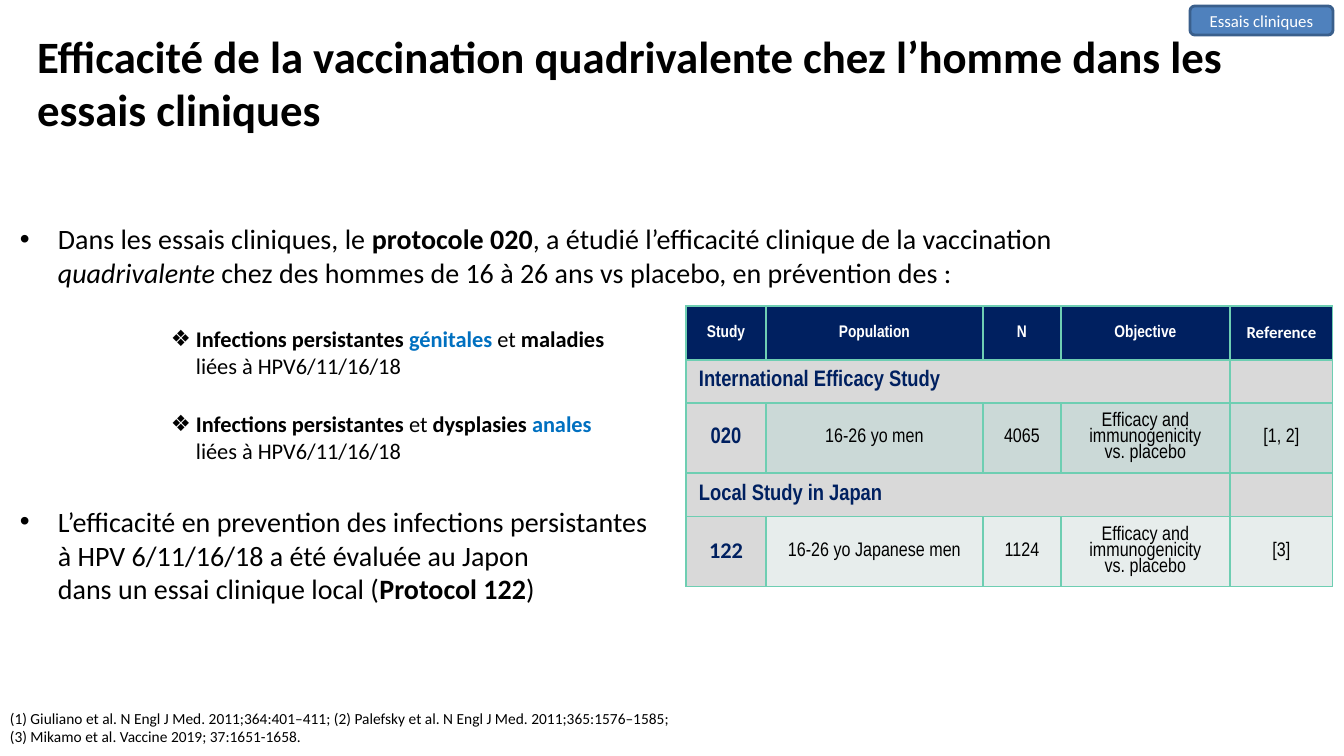
from copy import deepcopy

from lxml import etree
from pptx import Presentation
from pptx import util as u
from pptx.dml.color import RGBColor
from pptx.enum import shapes, text
from pptx.oxml.ns import qn

PX = 914400 / 100.8
BLACK = RGBColor(0x00, 0x00, 0x00)
WHITE = RGBColor(0xFF, 0xFF, 0xFF)
NAVY = RGBColor(0x00, 0x20, 0x60)
BLUE = RGBColor(0x00, 0x70, 0xC0)
TAG_FILL = RGBColor(0x4F, 0x81, 0xBD)
TAG_LINE = RGBColor(0x3A, 0x5F, 0x8C)
GREY = RGBColor(0xD9, 0xD9, 0xD9)
SAGE = RGBColor(0xCB, 0xD9, 0xD7)
PALE = RGBColor(0xE7, 0xED, 0xEC)
BORDER = RGBColor(0x6E, 0xCE, 0xB2)
CALIBRI, NARROW = "Calibri", "Arial Narrow"
BOLD, ITALIC, BOLD_BLUE = "bold", "italic", "bold blue"

TRIAL_OBJECTIVE = "Efficacy and immunogenicity\nvs. placebo"
STUDY_ROWS = [
    ["Study", "Population", "N", "Objective", "Reference"],
    ["International Efficacy Study"],
    ["020", "16-26 yo men", "4065", TRIAL_OBJECTIVE, "[1, 2]"],
    ["Local Study in Japan"],
    ["122", "16-26 yo Japanese men", "1124", TRIAL_OBJECTIVE, "[3]"],
]
COLUMN_WIDTHS = [80, 217, 78, 169, 103]
ROW_HEIGHTS = [54, 43, 70, 44, 70]
ROW_FILLS = [NAVY, GREY, SAGE, GREY, PALE]

# Each item: level, space before in points, styled pieces
BODY = [
    (0, 0, [("Dans les essais cliniques, le ", ""), ("protocole 020", BOLD),
            (", a étudié l’efficacité clinique de la vaccination ", ""),
            ("quadrivalente", ITALIC),
            (" chez des hommes de 16 à 26 ans vs placebo, en prévention des :", "")]),
    (1, 26, [("Infections persistantes ", BOLD), ("génitales ", BOLD_BLUE),
             ("et ", ""), ("maladies\n", BOLD), ("liées à HPV6/11/16/18", "")]),
    (1, 22, [("Infections persistantes ", BOLD), ("et ", ""), ("dysplasies ", BOLD),
             ("anales\n", BOLD_BLUE), ("liées à HPV6/11/16/18", "")]),
    (0, 29, [("L’efficacité en prevention des infections persistantes\n"
              "à HPV 6/11/16/18 a été évaluée au Japon\n"
              "dans un essai clinique local (", ""),
             ("Protocol 122", BOLD), (")", "")]),
]
# Per level: bullet, left indent and hanging in px, size in points
LEVELS = [("•", 38, 38, 20), ("❖", 176, 25, 16)]


def px(n):
    return u.Emu(round(n * PX))


def box(*lengths):
    return [px(n) for n in lengths]


def add_text(p, content, size, font=CALIBRI, color=BLACK, style=""):
    """Append a run per line, with sized line breaks between them."""
    for i, line in enumerate(content.split("\n")):
        if i:
            p.add_line_break()
            p._p[-1].append(deepcopy(r._r.rPr))
        r = p.add_run()
        r.text = line
        r.font.size = u.Pt(size)
        r.font.name = font
        r.font.bold = BOLD in style
        r.font.italic = ITALIC in style
        r.font.color.rgb = BLUE if style == BOLD_BLUE else color


def set_bullet(p, char, left, hanging):
    pPr = p._p.get_or_add_pPr()
    pPr.set("marL", str(px(left)))
    pPr.set("indent", str(-px(hanging)))
    etree.SubElement(pPr, qn("a:buFont"), typeface="Wingdings" if char == "❖" else "Arial")
    etree.SubElement(pPr, qn("a:buChar"), char=char)
    if char == "❖":
        pPr.find(qn("a:buFont")).set("typeface", "Arial")


def set_borders(cell):
    tcPr = cell._tc.get_or_add_tcPr()
    for i, side in enumerate(("lnL", "lnR", "lnT", "lnB")):
        ln = etree.Element(qn("a:" + side), w=str(u.Pt(1)))
        fill = etree.SubElement(ln, qn("a:solidFill"))
        etree.SubElement(fill, qn("a:srgbClr"), val=str(BORDER))
        tcPr.insert(i, ln)


def add_title(s, content):
    title = s.shapes.title
    title.left, title.top, title.width, title.height = box(27, 19, 1210, 126)
    tf = title.text_frame
    tf.vertical_anchor = text.MSO_ANCHOR.MIDDLE
    p = tf.paragraphs[0]
    p.alignment = text.PP_ALIGN.LEFT
    add_text(p, content, 32, style=BOLD)


def add_body(s):
    tf = s.shapes.add_textbox(*box(10, 217, 1200, 400)).text_frame
    tf.word_wrap = True
    for i, (level, gap, pieces) in enumerate(BODY):
        p = tf.add_paragraph() if i else tf.paragraphs[0]
        char, left, hanging, size = LEVELS[level]
        set_bullet(p, char, left, hanging)
        if gap:
            p.space_before = u.Pt(gap)
        for content, style in pieces:
            add_text(p, content, size, style=style)


def add_references(s, lines):
    tf = s.shapes.add_textbox(*box(0, 704, 1293, 47)).text_frame
    tf.word_wrap = True
    for i, line in enumerate(lines):
        p = tf.add_paragraph() if i else tf.paragraphs[0]
        add_text(p, line, 11)


def text_format(row, col):
    """Size, font, colour and style of a study table cell."""
    if row == 0:
        return 12, CALIBRI if col == 4 else NARROW, WHITE, BOLD
    if col == 0:
        return 16, CALIBRI if row == 4 else NARROW, NAVY, BOLD
    return 14, NARROW, BLACK, ""


def add_study_table(s):
    table = s.shapes.add_table(
        len(ROW_HEIGHTS), len(COLUMN_WIDTHS),
        *box(686, 306, sum(COLUMN_WIDTHS), sum(ROW_HEIGHTS))).table
    table.horz_banding = False
    for column, width in zip(table.columns, COLUMN_WIDTHS):
        column.width = px(width)
    for i, values in enumerate(STUDY_ROWS):
        table.rows[i].height = px(ROW_HEIGHTS[i])
        is_section = len(values) == 1
        for j in range(len(COLUMN_WIDTHS)):
            cell = table.cell(i, j)
            cell.fill.solid()
            cell.fill.fore_color.rgb = GREY if i and j == 0 else ROW_FILLS[i]
            set_borders(cell)
            cell.margin_left = cell.margin_right = px(13)
            cell.margin_top = cell.margin_bottom = px(5)
            cell.vertical_anchor = text.MSO_ANCHOR.MIDDLE
            if j < len(values):
                p = cell.text_frame.paragraphs[0]
                p.line_spacing = 0.85
                p.alignment = text.PP_ALIGN.LEFT if is_section else text.PP_ALIGN.CENTER
                add_text(p, values[j], *text_format(i, j))
        if is_section:
            table.cell(i, 0).merge(table.cell(i, 3))


def add_tag(s, content):
    sp = s.shapes.add_shape(shapes.MSO_SHAPE.ROUNDED_RECTANGLE, *box(1190, 6, 143, 29))
    sp.shadow.inherit = False
    sp.fill.solid()
    sp.fill.fore_color.rgb = TAG_FILL
    sp.line.color.rgb = TAG_LINE
    sp.line.width = u.Pt(2)
    tf = sp.text_frame
    tf.vertical_anchor = text.MSO_ANCHOR.MIDDLE
    p = tf.paragraphs[0]
    p.alignment = text.PP_ALIGN.CENTER
    add_text(p, content, 12, color=WHITE)


def main():
    prs = Presentation()
    prs.slide_width, prs.slide_height = box(1344, 756)
    s = prs.slides.add_slide(prs.slide_layouts[5])
    add_title(s, "Efficacité de la vaccination quadrivalente chez l’homme dans les essais cliniques")
    add_body(s)
    add_references(s, [
        "(1) Giuliano et al. N Engl J Med. 2011;364:401–411; "
        "(2) Palefsky et al. N Engl J Med. 2011;365:1576–1585;",
        "(3) Mikamo et al. Vaccine 2019; 37:1651-1658.",
    ])
    add_study_table(s)
    add_tag(s, "Essais cliniques")
    prs.save("out.pptx")


if __name__ == "__main__":
    main()
